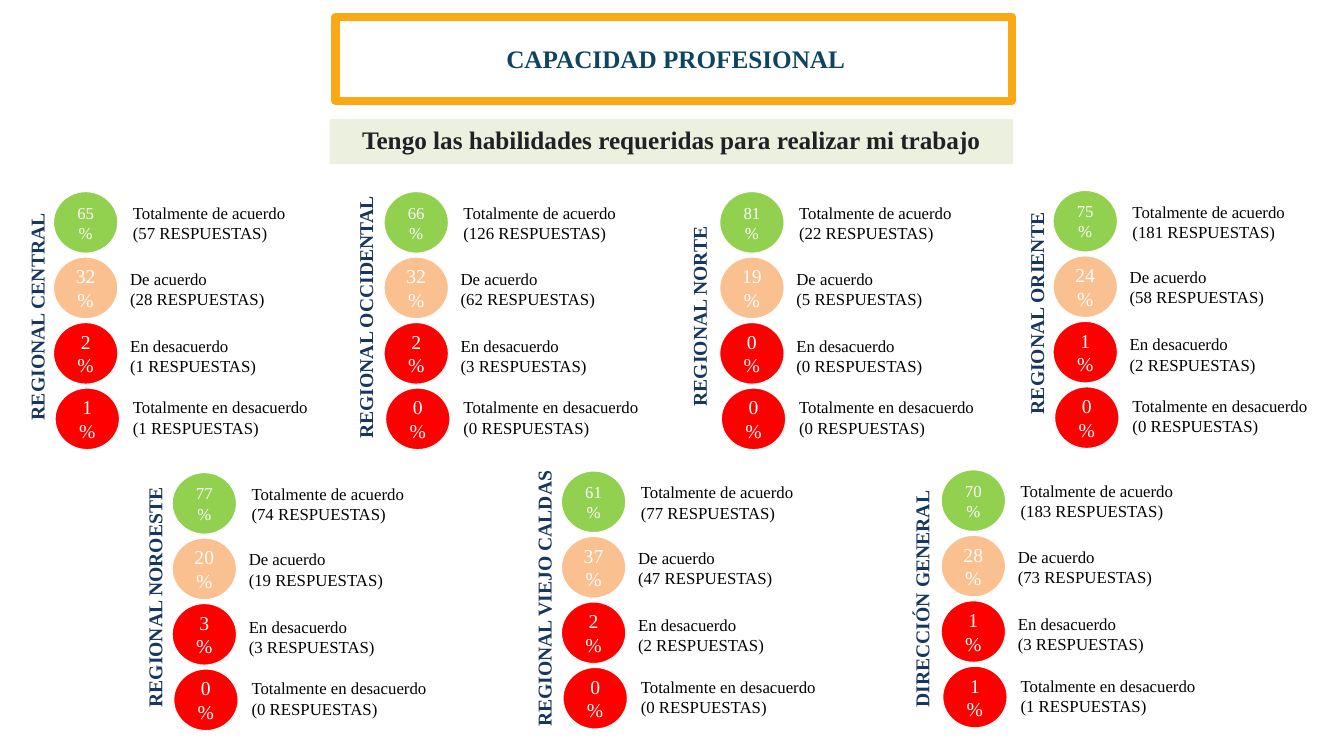
import pptx
import pptx.dml.color
import pptx.enum.shapes
import pptx.enum.text
import pptx.util

Cm, Pt = pptx.util.Cm, pptx.util.Pt
SHAPES = pptx.enum.shapes.MSO_SHAPE
ALIGN = pptx.enum.text.PP_ALIGN
ANCHOR = pptx.enum.text.MSO_ANCHOR

SLIDE_WIDTH, SLIDE_HEIGHT = 33.87, 19.05
CIRCLE_WIDTH, CIRCLE_HEIGHT, CIRCLE_STEP = 1.62, 1.55, 1.65

# Answer levels: label, circle colour, percentage size, circle shift,
# caption offset from the region's corner, caption width
LEVELS = [
    ("Totalmente de acuerdo", "92D050", 12, 0, 1.75, 0.03, 6.02),
    ("De acuerdo", "FAC090", 14, 0, 1.68, 1.68, 4.55),
    ("En desacuerdo", "FF0000", 14, 0, 1.68, 3.37, 4.55),
    ("Totalmente en desacuerdo", "FF0000", 14, 0.04, 1.75, 4.93, 6.15),
]

# Regions: name, corner of the circles, heading offset from it,
# (percentage, answers) per level
REGIONS = [
    ("REGIONAL CENTRAL", (1.35, 4.83), (-0.97, -2.14),
     [(65, 57), (32, 28), (2, 1), (1, 1)]),
    ("REGIONAL OCCIDENTAL", (9.68, 4.83), (-1.02, -1.67),
     [(66, 126), (32, 62), (2, 3), (0, 0)]),
    ("REGIONAL NORTE", (18.14, 4.83), (-1.07, -2.49),
     [(81, 22), (19, 5), (0, 0), (0, 0)]),
    ("REGIONAL ORIENTE", (26.54, 4.8), (-0.97, -2.26),
     [(75, 181), (24, 58), (1, 2), (0, 0)]),
    ("REGIONAL NOROESTE", (4.34, 11.91), (-0.99, -1.98),
     [(77, 74), (20, 19), (3, 3), (0, 0)]),
    ("REGIONAL VIEJO CALDAS", (14.15, 11.87), (-0.99, -1.45),
     [(61, 77), (37, 47), (2, 2), (0, 0)]),
    ("DIRECCIÓN GENERAL", (23.72, 11.84), (-1.04, -1.91),
     [(70, 183), (28, 73), (1, 3), (1, 1)]),
]


def rgb(color):
    return pptx.dml.color.RGBColor.from_string(color)


def write(shape, text, size=12, color="000000", bold=False, align=ALIGN.LEFT,
          anchor=ANCHOR.TOP, margin_y=0.13, spacing=None, direction=None):
    frame = shape.text_frame
    frame.text = text
    frame.word_wrap = True
    frame.vertical_anchor = anchor
    frame.margin_left = frame.margin_right = Cm(0.25)
    frame.margin_top = frame.margin_bottom = Cm(margin_y)
    if direction:
        frame._txBody.bodyPr.set("vert", direction)
    for paragraph in frame.paragraphs:
        paragraph.alignment = align
        paragraph.line_spacing = spacing
        for run in paragraph.runs:
            run.font.name = "Times New Roman"
            run.font.size = Pt(size)
            run.font.bold = bold
            run.font.color.rgb = rgb(color)


def add_text(slide, box, text, **text_format):
    write(slide.shapes.add_textbox(*map(Cm, box)), text, **text_format)


def add_figure(slide, kind, box, fill=None, line=None, line_width=0.75):
    figure = slide.shapes.add_shape(kind, *map(Cm, box))
    figure.shadow.inherit = False
    if fill:
        figure.fill.solid()
        figure.fill.fore_color.rgb = rgb(fill)
    else:
        figure.fill.background()
    if line:
        figure.line.color.rgb = rgb(line)
        figure.line.width = Pt(line_width)
    else:
        figure.line.fill.background()
    return figure


def add_header(slide, left, top):
    # Framed title
    add_figure(slide, SHAPES.RECTANGLE, (left + 0.15, top, 17.04, 2.11),
               line="F8A913", line_width=6)
    add_text(slide, (left + 0.2, top + 0.23, 17.04, 1.73),
             "CAPACIDAD PROFESIONAL", size=18, color="0C4563", bold=True,
             align=ALIGN.CENTER, anchor=ANCHOR.MIDDLE, spacing=0.9)
    # Survey statement
    statement = add_figure(slide, SHAPES.RECTANGLE,
                           (left, top + 2.57, 17.22, 1.14), fill="EBF1DE")
    write(statement, "Tengo las habilidades requeridas para realizar mi trabajo",
          size=18, color="202124", bold=True, align=ALIGN.CENTER)


def add_region(slide, name, corner, heading_offset, results):
    left, top = corner
    # Circles with percentages and their captions
    for row, (level, (percent, answers)) in enumerate(zip(LEVELS, results)):
        label, fill, size, shift, caption_x, caption_y, caption_width = level
        circle = add_figure(
            slide, SHAPES.OVAL,
            (left + shift, top + row * CIRCLE_STEP, CIRCLE_WIDTH, CIRCLE_HEIGHT),
            fill=fill, line="FFFFFF")
        write(circle, f"{percent}%", size=size, color="FFFFFF",
              align=ALIGN.CENTER, anchor=ANCHOR.MIDDLE, margin_y=0.25)
        caption_left = left + caption_x
        width = min(caption_width, SLIDE_WIDTH - caption_left)
        add_text(slide, (caption_left, top + caption_y, width, 1.55),
                 f"{label}\n({answers} RESPUESTAS)", margin_y=0.25)
    # Vertical heading
    heading_x, heading_y = heading_offset
    add_text(slide, (left + heading_x, top + heading_y, 1.12, 8.03), name,
             size=14, color="17375E", bold=True, direction="vert270")


def main():
    deck = pptx.Presentation()
    deck.slide_width, deck.slide_height = Cm(SLIDE_WIDTH), Cm(SLIDE_HEIGHT)
    slide = deck.slides.add_slide(deck.slide_layouts[6])
    add_header(slide, 8.31, 0.43)
    for region in REGIONS:
        add_region(slide, *region)
    deck.save("out.pptx")


if __name__ == "__main__":
    main()
